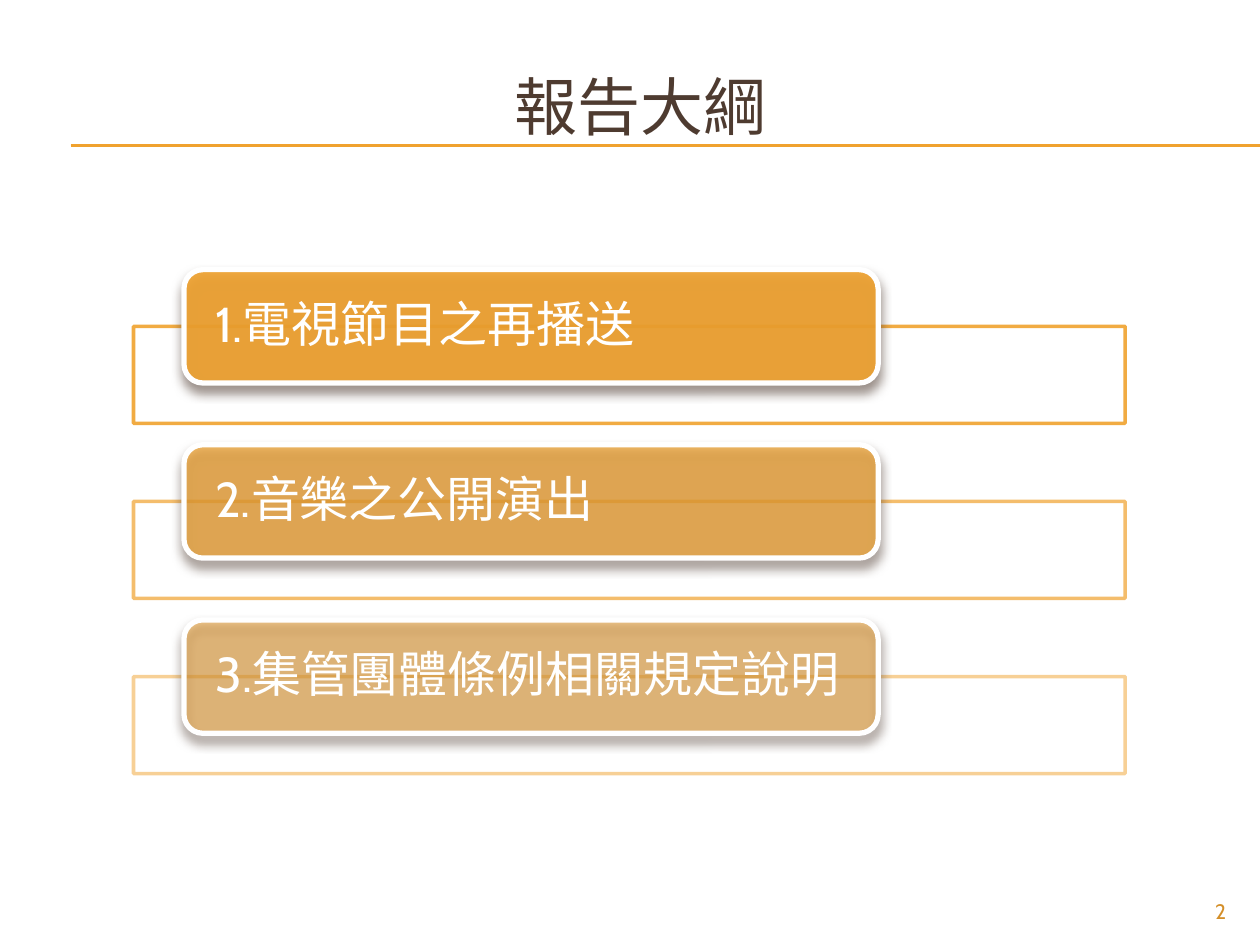
from lxml.etree import SubElement
from pptx import Presentation
from pptx.dml.color import RGBColor
from pptx.enum.shapes import MSO_CONNECTOR, MSO_SHAPE
from pptx.enum.text import MSO_ANCHOR, PP_ALIGN
from pptx.oxml.ns import qn
from pptx.util import Inches, Pt

TITLE = "報告大綱"
TOPICS = [
    ("1.電視節目之再播送", 90),
    ("2.音樂之公開演出", 70),
    ("3.集管團體條例相關規定說明", 50),
]
PAGE = "2"

FONT = "Cabin"
ORANGE = RGBColor(0xF0, 0xA2, 0x2E)
DARK_ORANGE = RGBColor(0xD4, 0x8F, 0x29)
BROWN = RGBColor(0x4E, 0x3B, 0x30)
WHITE = RGBColor(0xFF, 0xFF, 0xFF)

SLIDE_W, SLIDE_H = 10, 7.5
RULE_LEFT, RULE_TOPS = 0.56, (1.15, 1.16)
TITLE_BOX = (1.46, 0.21, 7.25, 1.25)
PAGE_BOX = (9, 7.08, 0.83, 0.27)
TOPIC_TOP, TOPIC_PITCH = 2.14, 1.39
LABEL_LEFT, LABEL_W, LABEL_H = 1.46, 5.51, 0.9
FRAME_LEFT, FRAME_W, FRAME_H = 1.06, 7.87, 0.77
TEXT_INSET = 0.04


def add_alpha(color, percent):
    SubElement(color, qn("a:alpha"), val=str(percent * 1000))


def set_opacity(color_format, percent):
    add_alpha(color_format._xFill.find(qn("a:srgbClr")), percent)


def add_shadow(sp):
    effects = SubElement(sp._element.spPr, qn("a:effectLst"))
    shadow = SubElement(effects, qn("a:outerShdw"), blurRad=str(Pt(6)),
                        dist=str(Pt(4)), dir=str(90 * 60000), rotWithShape="0")
    add_alpha(SubElement(shadow, qn("a:srgbClr"), val=str(BROWN)), 60)


def add_rule(shapes, y):
    rule = shapes.add_connector(MSO_CONNECTOR.STRAIGHT, Inches(RULE_LEFT), Inches(y),
                                Inches(SLIDE_W), Inches(y))
    rule.line.color.rgb = ORANGE
    rule.line.width = Pt(0.75)
    SubElement(rule._element.spPr, qn("a:effectLst"))


def add_text(shapes, text, box, size, color, align, anchor=MSO_ANCHOR.MIDDLE):
    tf = shapes.add_textbox(*map(Inches, box)).text_frame
    tf.word_wrap = True
    tf.vertical_anchor = anchor
    p = tf.paragraphs[0]
    p.text = text
    p.alignment = align
    p.font.size = Pt(size)
    p.font.name = FONT
    p.font.color.rgb = color
    return tf


def add_outlined(shapes, kind, box, color, width):
    sp = shapes.add_shape(kind, *map(Inches, box))
    sp.line.color.rgb = color
    sp.line.width = Pt(width)
    return sp


def add_frame(shapes, top, opacity):
    box = (FRAME_LEFT, top, FRAME_W, FRAME_H)
    frame = add_outlined(shapes, MSO_SHAPE.RECTANGLE, box, ORANGE, 2)
    frame.shadow.inherit = False
    frame.fill.background()
    set_opacity(frame.line.color, opacity)


def add_label(shapes, top, opacity):
    box = (LABEL_LEFT, top, LABEL_W, LABEL_H)
    label = add_outlined(shapes, MSO_SHAPE.ROUNDED_RECTANGLE, box, WHITE, 3)
    label.fill.solid()
    label.fill.fore_color.rgb = ORANGE
    set_opacity(label.fill.fore_color, opacity)
    add_shadow(label)


def add_label_text(shapes, top, text):
    box = (LABEL_LEFT + TEXT_INSET, top + TEXT_INSET,
           LABEL_W - 2 * TEXT_INSET, LABEL_H - 2 * TEXT_INSET)
    tf = add_text(shapes, text, box, 28, WHITE, PP_ALIGN.LEFT)
    tf.margin_left = tf.margin_right = Inches(0.21)
    tf.margin_top = tf.margin_bottom = 0
    tf.paragraphs[0].line_spacing = 0.9


prs = Presentation()
prs.slide_width, prs.slide_height = Inches(SLIDE_W), Inches(SLIDE_H)
s = prs.slides.add_slide(prs.slide_layouts[6])

for y in RULE_TOPS:
    add_rule(s.shapes, y)

add_text(s.shapes, TITLE, TITLE_BOX, 36, BROWN, PP_ALIGN.CENTER)

topics = s.shapes.add_group_shape().shapes
for i, (text, opacity) in enumerate(TOPICS):
    top = TOPIC_TOP + i * TOPIC_PITCH
    add_frame(topics, top + LABEL_H / 2, opacity)
    add_label(topics, top, opacity)
    add_label_text(topics, top, text)

add_text(s.shapes, PAGE, PAGE_BOX, 12, DARK_ORANGE, PP_ALIGN.RIGHT, MSO_ANCHOR.TOP)

prs.save("out.pptx")
